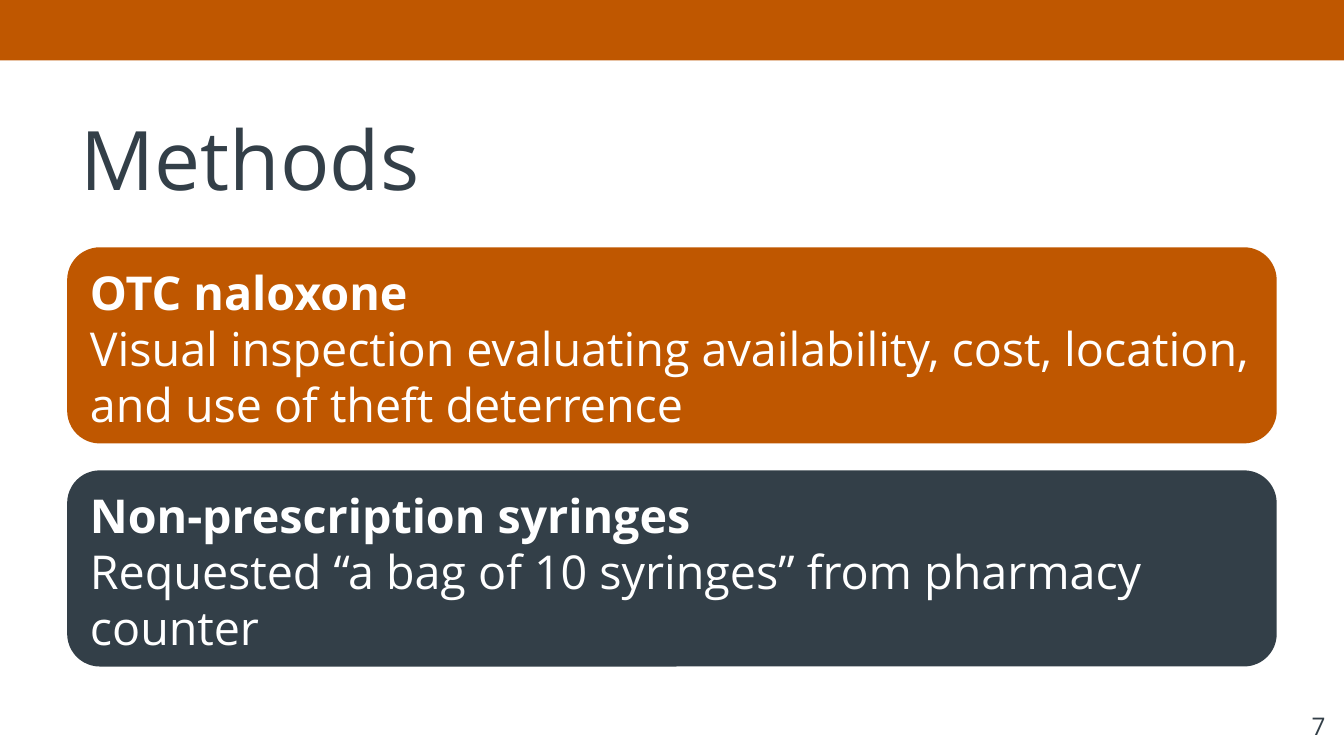
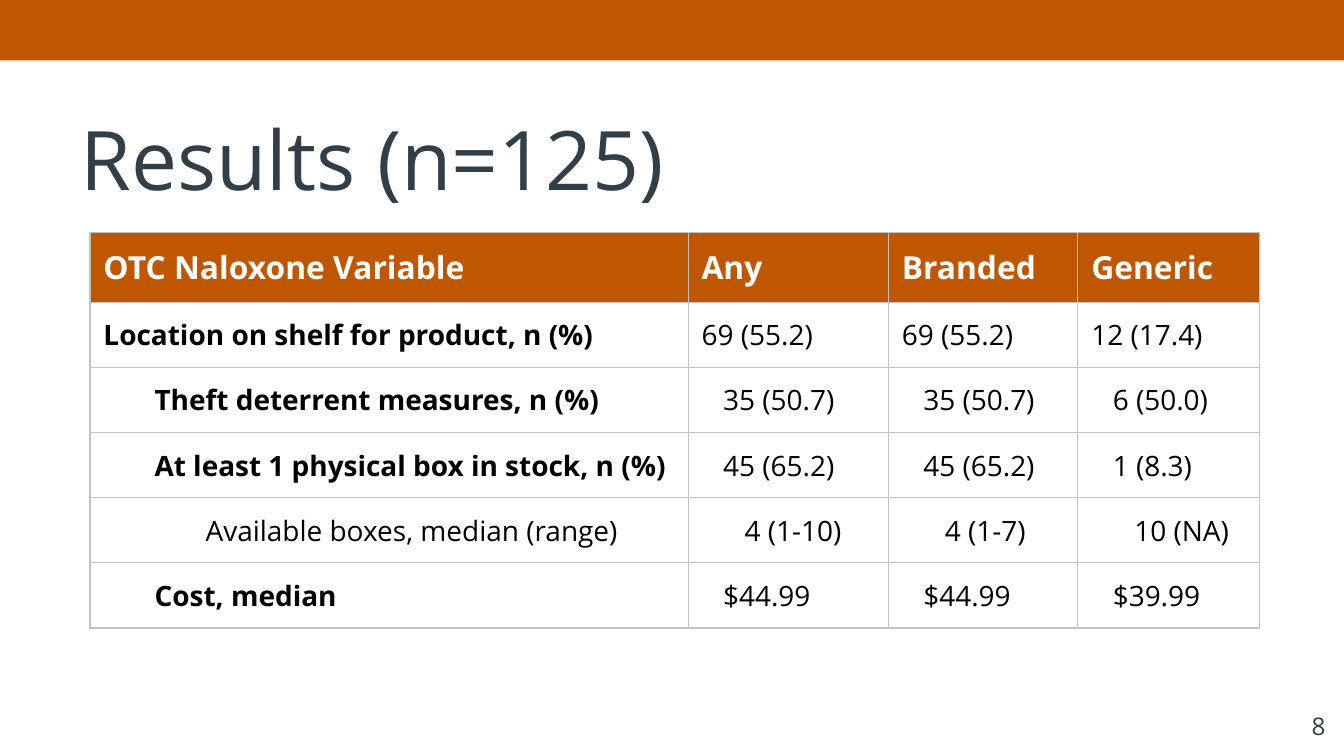
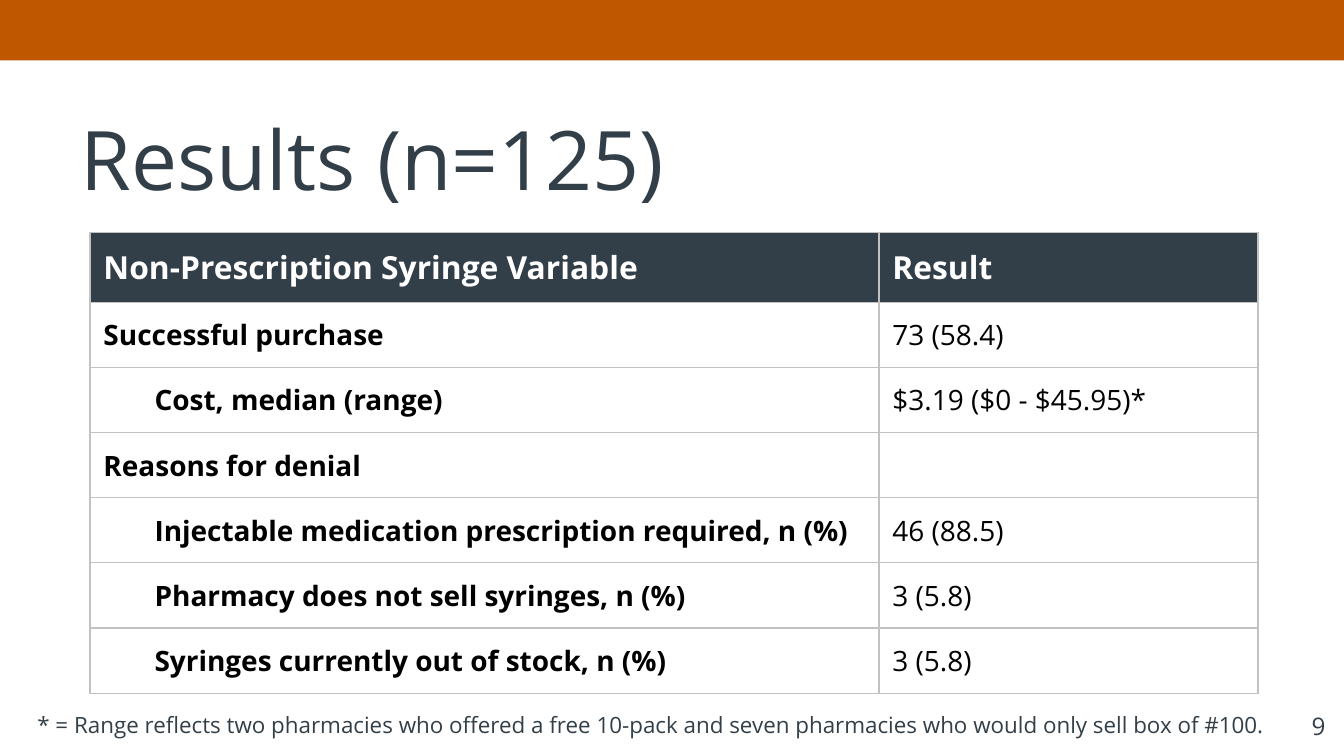
import pptx
import pptx.util
import pptx.dml.color
import pptx.enum.shapes
import pptx.enum.text
import pptx.oxml
import pptx.oxml.ns

Inches = pptx.util.Inches
Pt = pptx.util.Pt
RGBColor = pptx.dml.color.RGBColor
ALIGN = pptx.enum.text.PP_ALIGN
SHAPE = pptx.enum.shapes.MSO_SHAPE

ORANGE = RGBColor(0xBF, 0x57, 0x00)
SLATE = RGBColor(0x33, 0x3F, 0x48)
WHITE = RGBColor(0xFF, 0xFF, 0xFF)
BLACK = RGBColor(0x00, 0x00, 0x00)
GRID = RGBColor(0xC2, 0xC2, 0xC2)
FONT = "Open Sans"
HEAD_ROW = Inches(0.52)
BODY_ROW = Inches(0.97) // 2

# Each row: indent level, bold label, label, values
NALOXONE = [
    (0, True, "Location on shelf for product, n (%)", "69 (55.2)", "69 (55.2)", "12 (17.4)"),
    (1, True, "Theft deterrent measures, n (%)", "35 (50.7)", "35 (50.7)", "6 (50.0)"),
    (1, True, "At least 1 physical box in stock, n (%)", "45 (65.2)", "45 (65.2)", "1 (8.3)"),
    (2, False, "Available boxes, median (range)", "4 (1-10)", "4 (1-7)", "10 (NA)"),
    (1, True, "Cost, median", "$44.99", "$44.99", "$39.99"),
]
SYRINGES = [
    (0, True, "Successful purchase", "73 (58.4)"),
    (1, True, "Cost, median (range)", "$3.19 ($0 - $45.95)*"),
    (0, True, "Reasons for denial", ""),
    (1, True, "Injectable medication prescription required, n (%)", "46 (88.5)"),
    (1, True, "Pharmacy does not sell syringes, n (%)", "3 (5.8)"),
    (1, True, "Syringes currently out of stock, n (%)", "3 (5.8)"),
]


def style(par, size, color, bold=False):
    for run in par.runs:
        run.font.name = FONT
        run.font.size = Pt(size)
        run.font.bold = bold
        run.font.color.rgb = color


def add_box(slide, kind, x, y, w, h, fill):
    box = slide.shapes.add_shape(kind, Inches(x), Inches(y), Inches(w), Inches(h))
    box.shadow.inherit = False
    box.fill.solid()
    box.fill.fore_color.rgb = fill
    box.line.fill.background()
    return box


def add_band(slide):
    """Put the top band on the layout, so that every slide has it."""
    band = add_box(slide, SHAPE.RECTANGLE, 0, 0, 10, 0.45, ORANGE)
    slide.slide_layout.shapes.element.insert(2, band.element)


def add_note(slide, text, x, w, size, align=ALIGN.LEFT):
    note = slide.shapes.add_textbox(Inches(x), Inches(5.19), Inches(w), Inches(0.43))
    frame = note.text_frame
    frame.word_wrap = True
    frame.margin_left = frame.margin_right = Inches(0.1)
    frame.margin_top = frame.margin_bottom = Inches(0.1)
    frame.text = text
    frame.paragraphs[0].alignment = align
    style(frame.paragraphs[0], size, SLATE)


def add_slide(deck, title, number):
    slide = deck.slides.add_slide(deck.slide_layouts[5])
    head = slide.shapes.title
    head.left, head.top = Inches(0.5), Inches(0.7)
    head.width, head.height = Inches(9), Inches(0.94)
    frame = head.text_frame
    frame.text = title
    frame.auto_size = pptx.enum.text.MSO_AUTO_SIZE.NONE
    frame.vertical_anchor = pptx.enum.text.MSO_ANCHOR.MIDDLE
    frame.paragraphs[0].alignment = ALIGN.LEFT
    style(frame.paragraphs[0], 44, SLATE)
    add_note(slide, str(number), 9.36, 0.6, 13, ALIGN.RIGHT)
    return slide


def add_card(slide, y, fill, head, body):
    card = add_box(slide, SHAPE.ROUNDED_RECTANGLE, 0.5, y, 9, 1.46, fill)
    frame = card.text_frame
    frame.word_wrap = True
    frame.vertical_anchor = pptx.enum.text.MSO_ANCHOR.TOP
    frame.text = head + "\n" + body
    for par, bold in zip(frame.paragraphs, (True, False)):
        par.alignment = ALIGN.LEFT
        style(par, 25, WHITE, bold)


def add_edges(cell):
    props = cell._tc.get_or_add_tcPr()
    for side in "LRTB":
        props.append(pptx.oxml.parse_xml(
            f'<a:ln{side} {pptx.oxml.ns.nsdecls("a")} w="{Pt(0.75)}">'
            f'<a:solidFill><a:srgbClr val="{GRID}"/></a:solidFill></a:ln{side}>'))


def fill_cell(cell, text, size, color, bold, fill=None, indent=0):
    add_edges(cell)
    if fill is None:
        cell.fill.background()
    else:
        cell.fill.solid()
        cell.fill.fore_color.rgb = fill
    if not text:
        return
    cell.margin_left = cell.margin_right = Inches(0.1)
    cell.margin_top = cell.margin_bottom = Inches(0.1)
    cell.text = text
    par = cell.text_frame.paragraphs[0]
    if indent:
        par._p.get_or_add_pPr().set("marL", str(Inches(indent)))
    style(par, size, color, bold)


def add_grid(slide, heads, rows, widths, fill, step):
    """Add a table; step is the indent of the values per level."""
    grid = slide.shapes.add_table(
        len(rows) + 1, len(heads), Inches(0.67), Inches(1.73),
        Inches(sum(widths)), HEAD_ROW + BODY_ROW * len(rows)).table
    for col, width in zip(grid.columns, widths):
        col.width = Inches(width)
    for r, row in enumerate(grid.rows):
        row.height = BODY_ROW if r else HEAD_ROW
    for c, head in enumerate(heads):
        fill_cell(grid.cell(0, c), head, 17, WHITE, True, fill)
    for r, (level, bold, *texts) in enumerate(rows, 1):
        for c, text in enumerate(texts):
            indent = level * (step if c else 0.38)
            fill_cell(grid.cell(r, c), text, 15, BLACK, bold and c == 0, indent=indent)


def main():
    deck = pptx.Presentation()
    deck.slide_width = Inches(10)
    deck.slide_height = deck.slide_width * 9 // 16

    slide = add_slide(deck, "Methods", 7)
    add_band(slide)
    add_card(slide, 1.84, ORANGE, "OTC naloxone",
             "Visual inspection evaluating availability, cost, location, "
             "and use of theft deterrence")
    add_card(slide, 3.5, SLATE, "Non-prescription syringes",
             "Requested “a bag of 10 syringes” from pharmacy counter")

    slide = add_slide(deck, "Results (n=125)", 8)
    add_grid(slide, ["OTC Naloxone Variable", "Any", "Branded", "Generic"],
             NALOXONE, [4.45, 1.49, 1.41, 1.35], ORANGE, 0.16)

    slide = add_slide(deck, "Results (n=125)", 9)
    add_grid(slide, ["Non-Prescription Syringe Variable", "Result"],
             SYRINGES, [5.87, 2.82], SLATE, 0)
    add_note(slide, "* = Range reflects two pharmacies who offered a free 10-pack "
             "and seven pharmacies who would only sell box of #100.", 0.18, 9.36, 12)

    deck.save("out.pptx")


if __name__ == "__main__":
    main()
